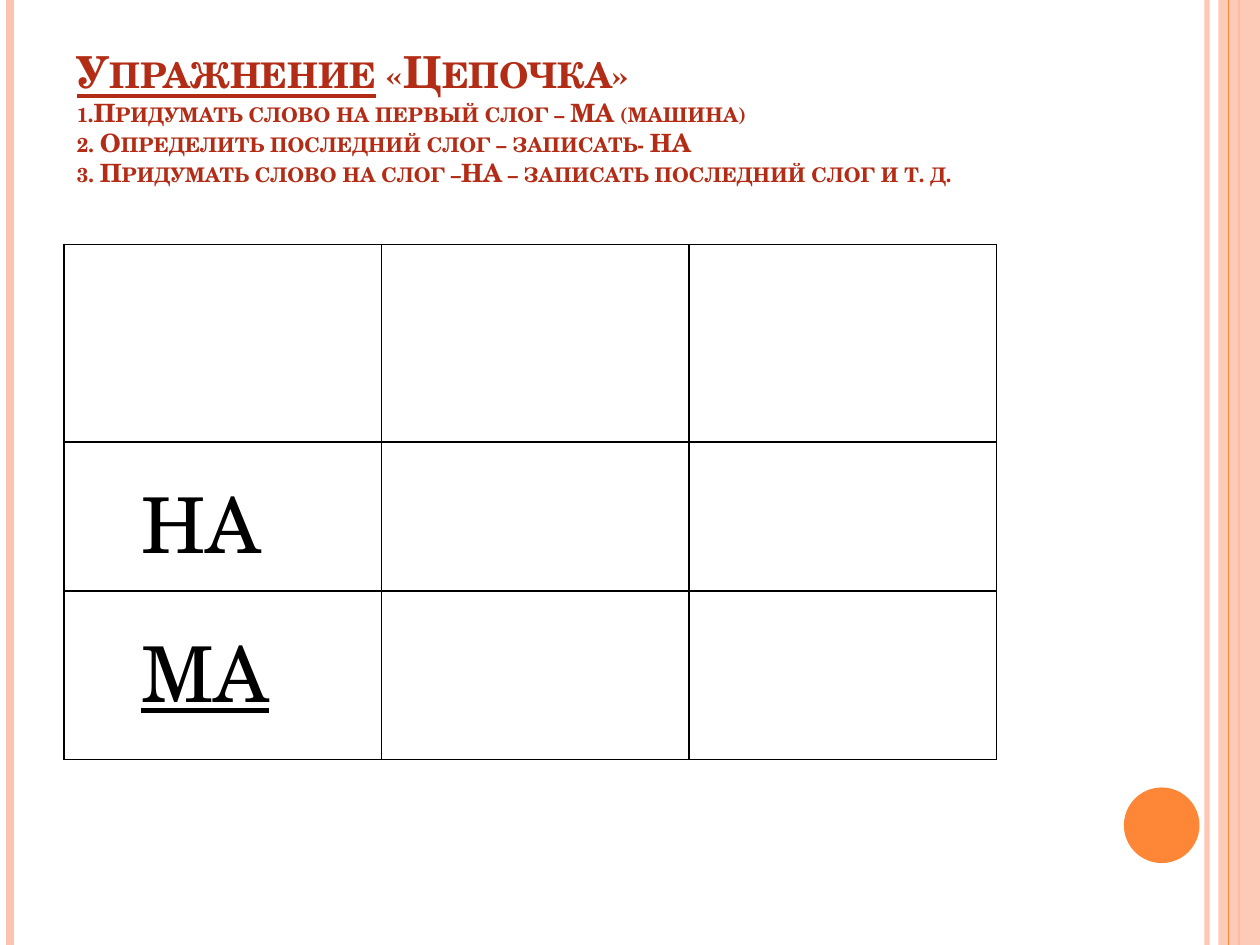
import copy
from dataclasses import dataclass

import lxml.etree
import pptx
import pptx.dml.color
import pptx.enum.shapes
import pptx.enum.text
import pptx.oxml.ns
import pptx.util

Inches = pptx.util.Inches
Pt = pptx.util.Pt
Shape = pptx.enum.shapes.MSO_SHAPE
Text = pptx.enum.text
qn = pptx.oxml.ns.qn


@dataclass
class Theme:
    font: str = "TeX Gyre Schola"
    head: str = "B32C16"
    ink: str = "000000"
    pale: str = "FEC3AE"
    warm: str = "FE8637"
    big: float = 25.2
    small: float = 14.4
    cell: float = 44


def rgb(code):
    return pptx.dml.color.RGBColor.from_string(code)


def put(item, values):
    for name, value in values.items():
        setattr(item, name, value)


def fade(fill, share):
    """Set the opacity of a solid fill, in percent."""
    color = fill._xPr.find(qn("a:solidFill"))[0]
    lxml.etree.SubElement(color, qn("a:alpha"), val=str(share * 1000))


class Page:
    """Holds the theme and the slide being drawn."""

    def __init__(self, slide, theme):
        self.slide = slide
        self.theme = theme

    def style(self, font, color, **values):
        put(font, {"name": self.theme.font, **values})
        font.color.rgb = rgb(color)

    def rule(self, left, color, width, share=100):
        """Draw a line from the top to the bottom of the slide."""
        line = self.slide.shapes.add_connector(
            pptx.enum.shapes.MSO_CONNECTOR.STRAIGHT,
            Inches(left), 0, Inches(left), Inches(7.5))
        line.line.color.rgb = rgb(color)
        line.line.width = Pt(width)
        if share < 100:
            fade(line.line.fill, share)
        lxml.etree.SubElement(line._element.spPr, qn("a:effectLst"))
        return line

    def shape(self, kind, box, color, share=100):
        item = self.slide.shapes.add_shape(kind, *map(Inches, box))
        item.shadow.inherit = False
        item.fill.solid()
        item.fill.fore_color.rgb = rgb(color)
        if share < 100:
            fade(item.fill, share)
        item.line.fill.background()
        return item

    def title(self, box, lines):
        """Fill the title with lines, each a list of (text, format) runs."""
        item = self.slide.shapes.title
        put(item, dict(zip(("left", "top", "width", "height"), map(Inches, box))))
        put(item.text_frame, {
            "word_wrap": True,
            "auto_size": Text.MSO_AUTO_SIZE.NONE,
            "vertical_anchor": Text.MSO_ANCHOR.BOTTOM,
        })
        para = item.text_frame.paragraphs[0]
        para.alignment = Text.PP_ALIGN.LEFT
        for index, line in enumerate(lines):
            if index:
                para.add_line_break()
                # The break keeps the type size of the line it ends.
                para._p[-1].append(copy.deepcopy(run._r.rPr))
            for text, form in line:
                run = para.add_run()
                run.text = text
                self.style(run.font, self.theme.head, bold=True, **form)
                run._r.rPr.set("cap", "small")

    def border(self, cell):
        for side in ("a:lnL", "a:lnR", "a:lnT", "a:lnB"):
            edge = lxml.etree.SubElement(
                cell._tc.get_or_add_tcPr(), qn(side), w=str(Pt(1)))
            fill = lxml.etree.SubElement(edge, qn("a:solidFill"))
            lxml.etree.SubElement(fill, qn("a:srgbClr"), val=self.theme.ink)

    def table(self, left, top, cols, rows, words):
        """Draw a grid; words maps (row, column) to (text, underline)."""
        grid = self.slide.shapes.add_table(
            len(rows), len(cols), Inches(left), Inches(top),
            Inches(sum(cols)), Inches(sum(rows))).table
        put(grid, {"first_row": False, "horz_banding": False})
        for col, width in zip(grid.columns, cols):
            col.width = Inches(width)
        for row, height in zip(grid.rows, rows):
            row.height = Inches(height)
        for cell in grid.iter_cells():
            self.border(cell)
            cell.fill.background()
        for spot, (text, under) in words.items():
            cell = grid.cell(*spot)
            put(cell, {"margin_left": Inches(0.61), "margin_top": Inches(0.19)})
            run = cell.text_frame.paragraphs[0].add_run()
            run.text = text
            self.style(run.font, self.theme.ink,
                       size=Pt(self.theme.cell), underline=under)


def main():
    deck = pptx.Presentation()
    put(deck, {"slide_width": Inches(10), "slide_height": Inches(7.5)})
    theme = Theme()
    page = Page(deck.slides.add_slide(deck.slide_layouts[5]), theme)

    page.rule(9.58, theme.pale, 3, 93)
    page.rule(0.08, theme.pale, 4.5)
    inner = page.rule(9.83, theme.warm, 1.5)
    band = page.shape(Shape.RECTANGLE, (9.67, 0, 0.33, 7.5), theme.pale, 87)
    inner.begin_connect(band, 0)
    inner.end_connect(band, 2)
    page.rule(9.75, theme.warm, 0.75)
    page.shape(Shape.OVAL, (8.92, 6.25, 0.6, 0.6), theme.warm)

    big = {"size": Pt(theme.big)}
    steps = (
        "1.Придумать слово на первый слог – МА (машина)",
        "2. Определить последний слог – записать- НА",
        "3. Придумать слово на слог –НА – записать последний слог и т. д.",
    )
    page.title((0.51, 0.29, 8.17, 1.25), [
        [("Упражнение", {**big, "underline": True}), (" «Цепочка»", big)],
        *([(step, {"size": Pt(theme.small)})] for step in steps),
    ])
    page.table(0.51, 1.94, (2.52, 2.44, 2.44), (1.57, 1.18, 1.34),
               {(1, 0): ("НА", False), (2, 0): ("МА", True)})
    deck.save("out.pptx")


if __name__ == "__main__":
    main()
